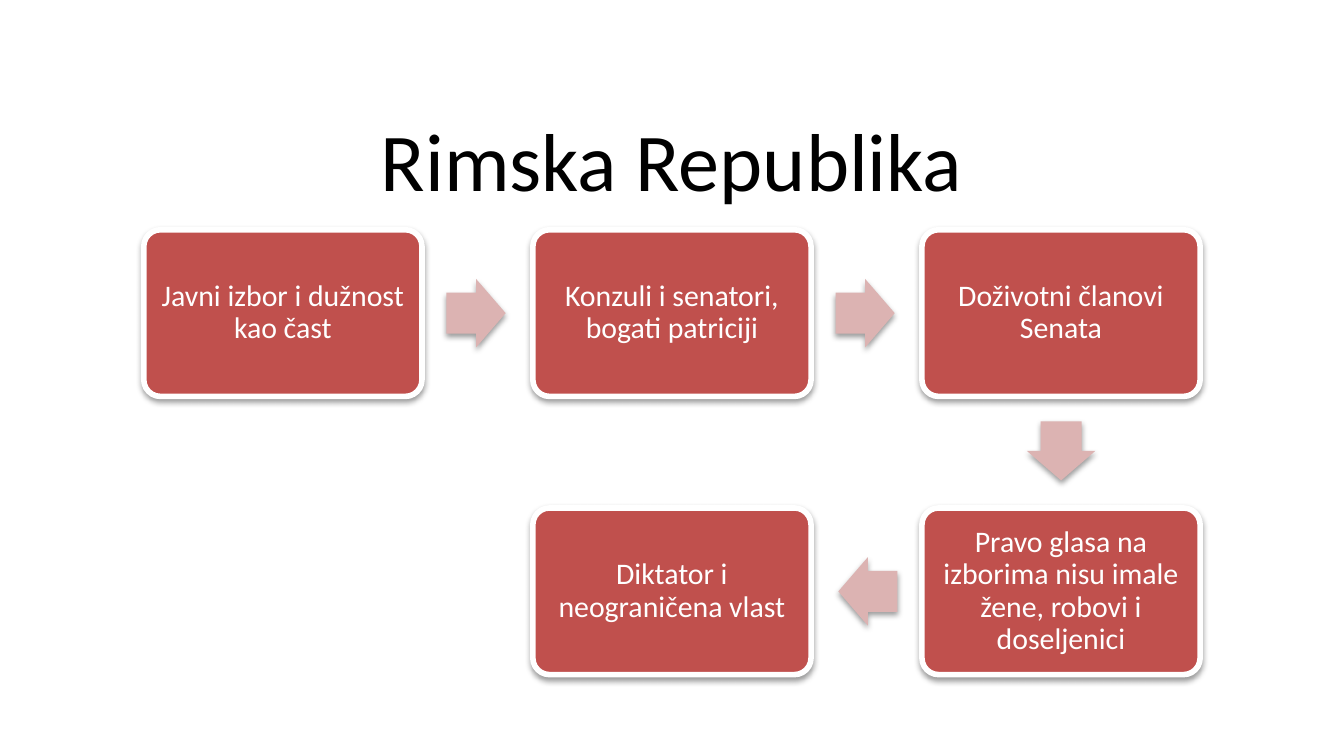
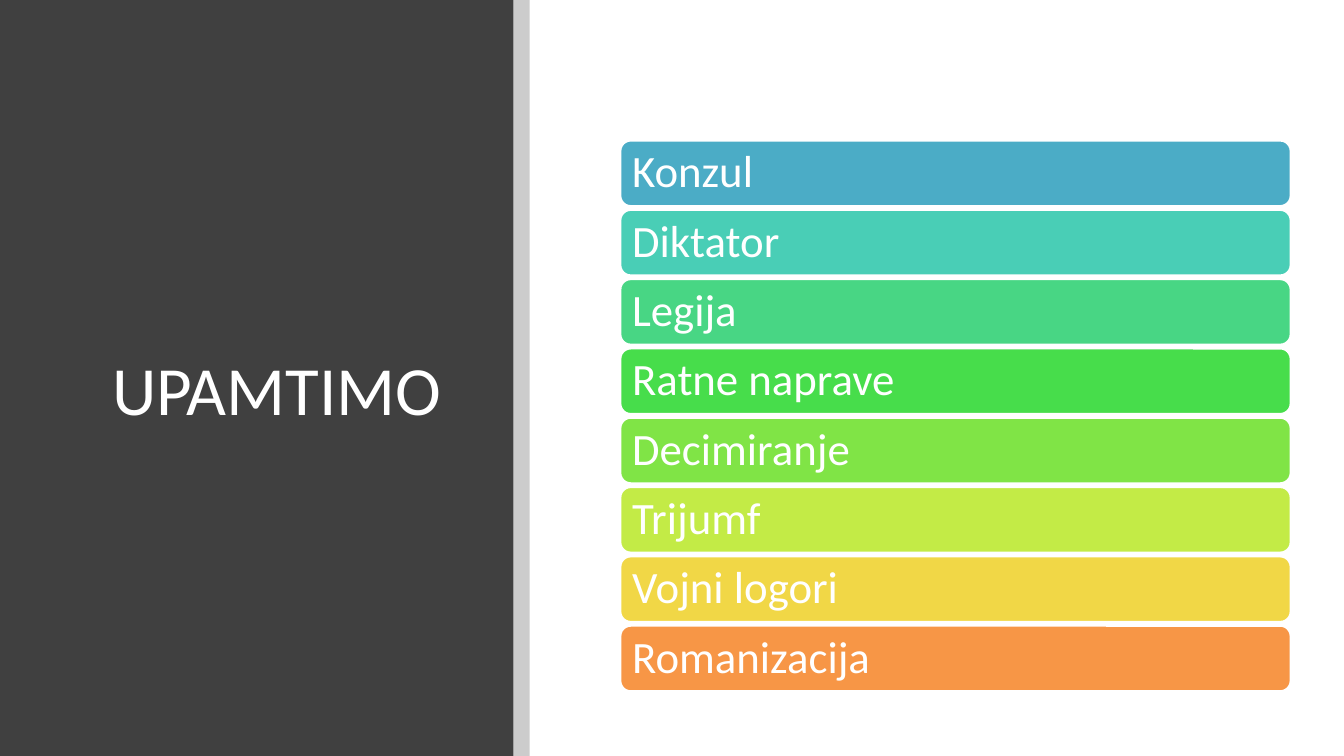
from itertools import pairwise
from math import atan2, cos, degrees, sin

from lxml.etree import SubElement
from pptx import Presentation
from pptx.dml.color import RGBColor
from pptx.enum.shapes import MSO_SHAPE
from pptx.enum.text import MSO_ANCHOR, MSO_AUTO_SIZE, PP_ALIGN
from pptx.oxml import parse_xml
from pptx.oxml.ns import nsdecls, qn
from pptx.util import Inches, Pt

FONT = "Calibri"
WIDTH = 10
HEIGHT = WIDTH * 9 / 16
WHITE = RGBColor(0xFF, 0xFF, 0xFF)
BLACK = RGBColor(0x00, 0x00, 0x00)
CHARCOAL = RGBColor(0x40, 0x40, 0x40)
BRICK = RGBColor(0xC0, 0x50, 0x4D)
ROSE = RGBColor(0xDC, 0xB3, 0xB2)

STEPS = [
    ("Javni izbor i dužnost kao čast", 0, 0),
    ("Konzuli i senatori, bogati patriciji", 1, 0),
    ("Doživotni članovi Senata", 2, 0),
    ("Pravo glasa na izborima nisu imale žene, robovi i doseljenici", 2, 1),
    ("Diktator i neograničena vlast", 1, 1),
]

TERMS = [
    ("Konzul", RGBColor(0x4B, 0xAC, 0xC6)),
    ("Diktator", RGBColor(0x49, 0xCE, 0xB6)),
    ("Legija", RGBColor(0x48, 0xD6, 0x84)),
    ("Ratne naprave", RGBColor(0x47, 0xDD, 0x4B)),
    ("Decimiranje", RGBColor(0x80, 0xE4, 0x46)),
    ("Trijumf", RGBColor(0xC3, 0xEB, 0x46)),
    ("Vojni logori", RGBColor(0xF1, 0xD7, 0x46)),
    ("Romanizacija", RGBColor(0xF7, 0x96, 0x46)),
]


def write(shape, text, size, color, align, spacing=0.9, margin=None):
    frame = shape.text_frame
    frame.word_wrap = True
    frame.auto_size = MSO_AUTO_SIZE.NONE
    frame.vertical_anchor = MSO_ANCHOR.MIDDLE
    if margin is not None:
        frame.margin_left = frame.margin_right = Inches(margin)
        frame.margin_top = frame.margin_bottom = Inches(margin)
    para = frame.paragraphs[0]
    para.alignment = align
    para.line_spacing = spacing
    span = para.add_run()
    span.text = text
    span.font.name = FONT
    span.font.size = Pt(size)
    span.font.color.rgb = color


def place_title(page, box, text, size, color, spacing):
    title = page.shapes.title
    title.left, title.top, title.width, title.height = map(Inches, box)
    write(title, text, size, color, PP_ALIGN.CENTER, spacing)


def add_block(page, kind, box, fill, line_width=0):
    block = page.shapes.add_shape(kind, *map(Inches, box))
    block.shadow.inherit = False
    block.fill.solid()
    block.fill.fore_color.rgb = fill
    if line_width:
        block.line.color.rgb = WHITE
        block.line.width = Pt(line_width)
    else:
        block.line.fill.background()
    return block


def drop_shadow(shape):
    effects = shape._element.spPr.find(qn("a:effectLst"))
    effects.append(parse_xml(
        f'<a:outerShdw {nsdecls("a")} blurRad="{Pt(3.1)}" dist="{Pt(1.6)}" '
        'dir="5400000" rotWithShape="0"><a:srgbClr val="000000">'
        '<a:alpha val="38000"/></a:srgbClr></a:outerShdw>'
    ))


def add_arrow(page, start, end):
    width, height, setback = 0.44, 0.51, 0.01
    angle = atan2(end[1] - start[1], end[0] - start[0])
    center_x = (start[0] + end[0]) / 2 - setback * cos(angle)
    center_y = (start[1] + end[1]) / 2 - setback * sin(angle)
    box = (center_x - width / 2, center_y - height / 2, width, height)
    arrow = add_block(page, MSO_SHAPE.RIGHT_ARROW, box, ROSE)
    arrow.adjustments[0] = 0.6
    arrow.adjustments[1] = 0.5
    arrow.rotation = degrees(angle)
    drop_shadow(arrow)


def add_flow(page, area):
    left, top, width, height = area
    card_width, card_height = 2.07, 1.24
    step_x, step_y = (width - card_width) / 2, height - card_height
    centers = []
    for text, column, row in STEPS:
        x, y = left + column * step_x, top + row * step_y
        card = add_block(page, MSO_SHAPE.ROUNDED_RECTANGLE,
                         (x, y, card_width, card_height), BRICK, 3)
        card.adjustments[0] = 0.1
        drop_shadow(card)
        write(card, text, 16, WHITE, PP_ALIGN.CENTER, margin=0.03)
        centers.append((x + card_width / 2, y + card_height / 2))
    for start, end in pairwise(centers):
        add_arrow(page, start, end)


def add_side_panel(page, width, edge_width):
    panel = add_block(page, MSO_SHAPE.RECTANGLE, (0, 0, width, HEIGHT), CHARCOAL)
    page.shapes.title._element.addprevious(panel._element)
    edge = add_block(page, MSO_SHAPE.RECTANGLE, (width, 0, edge_width, HEIGHT), BLACK)
    color = edge._element.spPr.find(qn("a:solidFill"))[0]
    SubElement(color, qn("a:alpha")).set("val", "20000")


def add_terms(page, area):
    left, top, width, height = area
    bar_height = 0.5
    step = (height - bar_height) / (len(TERMS) - 1)
    for index, (text, color) in enumerate(TERMS):
        box = (left, top + index * step, width, bar_height)
        bar = add_block(page, MSO_SHAPE.ROUNDED_RECTANGLE, box, color, 2)
        write(bar, text, 24, WHITE, PP_ALIGN.LEFT, margin=0.07)


def build_republic(page):
    place_title(page, (0.5, 0.84, 9, 0.78), "Rimska Republika", 44, BLACK, 0.9)
    add_flow(page, (1.07, 1.71, 7.86, 3.31))


def build_summary(page):
    place_title(page, (0.69, 0.67, 2.74, 4.43), "UPAMTIMO", 37, WHITE, 1.0)
    add_side_panel(page, 3.82, 0.12)
    add_terms(page, (4.61, 1.04, 5, 4.11))


def main():
    deck = Presentation()
    deck.slide_width, deck.slide_height = Inches(WIDTH), Inches(HEIGHT)
    title_only = deck.slide_layouts[5]
    for build in (build_republic, build_summary):
        build(deck.slides.add_slide(title_only))
    deck.save("out.pptx")


if __name__ == "__main__":
    main()
